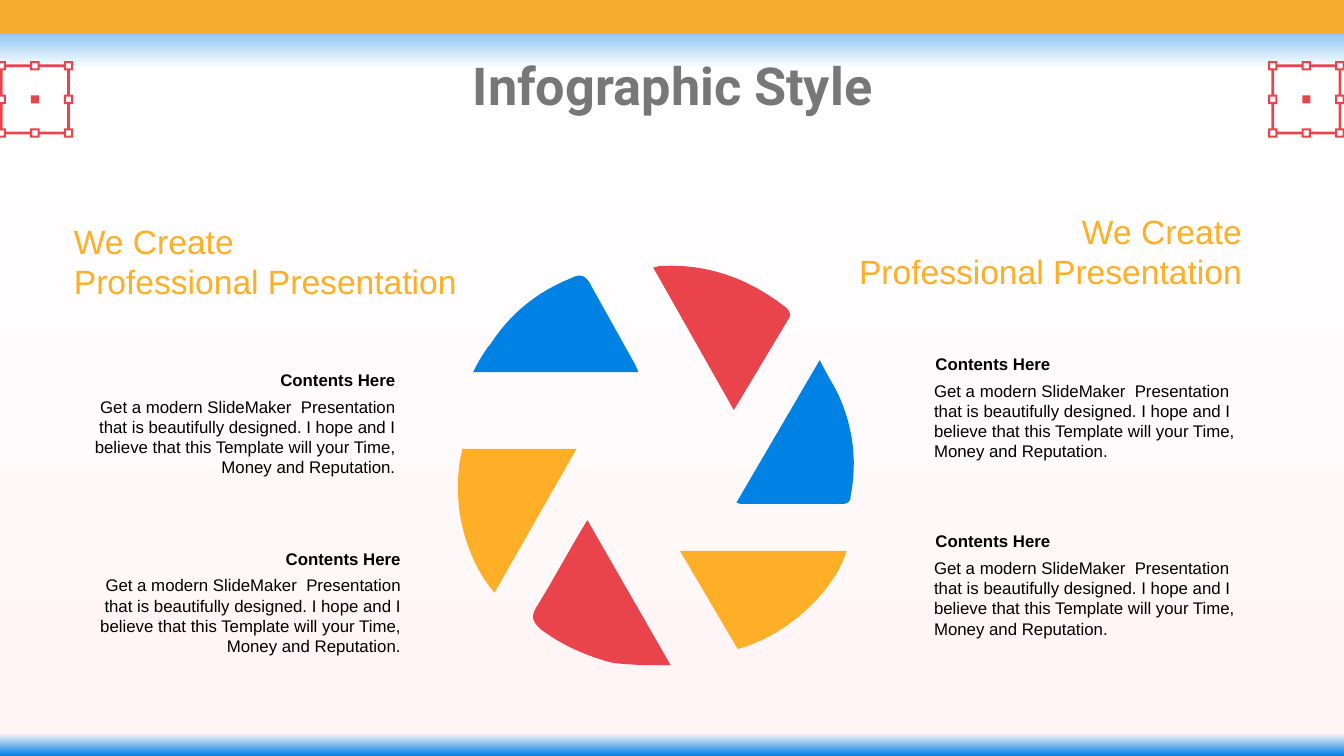
from dataclasses import dataclass
from itertools import product

from lxml import etree
from pptx import Presentation
from pptx.dml.color import RGBColor
from pptx.enum.shapes import MSO_SHAPE
from pptx.enum.text import PP_ALIGN
from pptx.oxml import parse_xml
from pptx.oxml.ns import nsdecls, qn
from pptx.shapes.autoshape import Shape
from pptx.slide import Slide
from pptx.util import Inches, Pt

BLUE = RGBColor(0x00, 0x82, 0xE5)
RED = RGBColor(0xE9, 0x44, 0x4C)
YELLOW = RGBColor(0xFF, 0xAE, 0x27)
BAR_ORANGE = RGBColor(0xF8, 0xAC, 0x2D)
PEACH = RGBColor(0xFF, 0xEC, 0xDC)
GRAY = RGBColor(0x77, 0x77, 0x77)
BLACK = RGBColor(0x00, 0x00, 0x00)

SLIDE_WIDTH = 10
SLIDE_HEIGHT = SLIDE_WIDTH * 9 / 16
CURVE_STEPS = 12
BACKDROP_STOPS = ((0, "2291E7"), (9, "FFFFFF"), (97, "FFF5F6"), (100, "0082E5"))
BODY = ("Get a modern SlideMaker  Presentation that is beautifully designed. "
        "I hope and I believe that this Template will your Time, Money and Reputation.")


@dataclass
class TextStyle:
    size: float
    color: RGBColor
    bold: bool = False
    font: str = "Arial"
    align: PP_ALIGN = PP_ALIGN.LEFT
    insets: tuple[float, float, float, float] = (0.06, 0.05, 0.09, 0.05)


@dataclass
class Block:
    left: float
    top: float
    width: float
    align: PP_ALIGN


@dataclass
class Blade:
    """A closed outline: 2 numbers make a line, 6 a cubic curve."""
    color: RGBColor
    start: tuple[float, float]
    segments: list[tuple[float, ...]]


HEADINGS = [
    Block(0.49, 1.64, 3.12, PP_ALIGN.LEFT),
    Block(6.15, 1.57, 3.12, PP_ALIGN.RIGHT),
]
CONTENTS = [
    Block(6.89, 2.58, 2.57, PP_ALIGN.LEFT),
    Block(6.89, 3.9, 2.57, PP_ALIGN.LEFT),
    Block(0.49, 4.03, 2.58, PP_ALIGN.RIGHT),
    Block(0.45, 2.7, 2.58, PP_ALIGN.RIGHT),
]
BLADES = [
    Blade(YELLOW, (5.06, 4.1), [(6.3, 4.1), (6.22, 4.37, 5.89, 4.72, 5.49, 4.83)]),
    Blade(YELLOW, (3.44, 3.34), [(4.29, 3.34), (3.68, 4.41),
                                 (3.51, 4.22, 3.33, 3.8, 3.44, 3.34)]),
    Blade(BLUE, (3.52, 2.77), [(3.56, 2.69, 3.6, 2.62, 3.65, 2.56),
                               (3.8, 2.33, 4, 2.17, 4.25, 2.07),
                               (4.31, 2.04, 4.35, 2.04, 4.39, 2.11),
                               (4.73, 2.72), (4.75, 2.77)]),
    Blade(BLUE, (5.48, 3.74), [(6.1, 2.68), (6.15, 2.78, 6.2, 2.86, 6.24, 2.94),
                               (6.35, 3.18, 6.38, 3.44, 6.33, 3.69),
                               (6.33, 3.73, 6.31, 3.75, 6.27, 3.75), (5.51, 3.75)]),
    Blade(RED, (5.46, 3.05), [(4.86, 1.99), (4.89, 1.99, 4.9, 1.98, 4.91, 1.98),
                              (5.26, 1.96, 5.57, 2.07, 5.85, 2.29),
                              (5.87, 2.31, 5.89, 2.34, 5.87, 2.37), (5.48, 3.02)]),
    Blade(RED, (4.37, 3.87), [(4.99, 4.95), (4.83, 4.95, 4.68, 4.95, 4.55, 4.93),
                              (4.36, 4.88, 4.18, 4.8, 4.02, 4.68),
                              (3.96, 4.62, 3.95, 4.59, 3.99, 4.52),
                              (4.12, 4.31, 4.23, 4.1, 4.37, 3.87)]),
]


def paint(shape: Shape, fill: RGBColor) -> None:
    shape.shadow.inherit = False
    shape.fill.solid()
    shape.fill.fore_color.rgb = fill
    shape.line.fill.background()


def add_rectangle(page: Slide, left: float, top: float, width: float, height: float,
                  fill: RGBColor) -> Shape:
    shape = page.shapes.add_shape(MSO_SHAPE.RECTANGLE, Inches(left), Inches(top),
                                  Inches(width), Inches(height))
    paint(shape, fill)
    return shape


def add_outline(page: Slide, contours: list[list[tuple[float, float]]], fill: RGBColor) -> None:
    builder = None
    for contour in contours:
        first, *others = [(Inches(x), Inches(y)) for x, y in contour]
        if builder is None:
            builder = page.shapes.build_freeform(*first)
        else:
            builder.move_to(*first)
        builder.add_line_segments(others, close=True)
    paint(builder.convert_to_shape(), fill)


def add_backdrop(page: Slide) -> None:
    page.background.fill.solid()
    page.background.fill.fore_color.rgb = PEACH
    backdrop = add_rectangle(page, 0, 0, SLIDE_WIDTH, SLIDE_HEIGHT, PEACH)
    gradient = parse_xml(f'<a:gradFill {nsdecls("a")} rotWithShape="1"><a:gsLst/>'
                         '<a:lin ang="5400000" scaled="0"/></a:gradFill>')
    for position, color in BACKDROP_STOPS:
        stop = etree.SubElement(gradient[0], qn("a:gs"), pos=str(position * 1000))
        etree.SubElement(stop, qn("a:srgbClr"), val=color)
    properties = backdrop.element.spPr
    properties.replace(properties.find(qn("a:solidFill")), gradient)


def rectangle_points(center_x: float, center_y: float, width: float,
                     height: float) -> list[tuple[float, float]]:
    left, top = center_x - width / 2, center_y - height / 2
    return [(left, top), (left + width, top), (left + width, top + height), (left, top + height)]


def add_selection_frame(page: Slide, center_x: float, center_y: float) -> None:
    reach, outer, inner, stroke = 0.25, 0.07, 0.04, 0.02
    contours = []
    # Hollow handles
    for column, row in product((-1, 0, 1), repeat=2):
        if column or row:
            for side in (outer, inner):
                contours.append(rectangle_points(center_x + column * reach,
                                                 center_y + row * reach, side, side))
    # Edges between the handles
    for side, half in product((-1, 1), repeat=2):
        across, along = side * reach, half * reach / 2
        contours.append(rectangle_points(center_x + along, center_y + across,
                                         reach - outer, stroke))
        contours.append(rectangle_points(center_x + across, center_y + along,
                                         stroke, reach - outer))
    add_outline(page, contours, RED)
    add_rectangle(page, center_x - 0.03, center_y - 0.03, 0.06, 0.06, RED)


def add_text(page: Slide, left: float, top: float, width: float, height: float,
             text: str, style: TextStyle) -> Shape:
    box = page.shapes.add_textbox(Inches(left), Inches(top), Inches(width), Inches(height))
    frame = box.text_frame
    frame.word_wrap = True
    (frame.margin_left, frame.margin_top,
     frame.margin_right, frame.margin_bottom) = map(Inches, style.insets)
    frame.text = text
    for para in frame.paragraphs:
        para.alignment = style.align
        for span in para.runs:
            span.font.name = style.font
            span.font.size = Pt(style.size)
            span.font.bold = style.bold
            span.font.color.rgb = style.color
    return box


def add_content(page: Slide, block: Block) -> None:
    title = TextStyle(9, BLACK, bold=True, align=block.align, insets=(0.07, 0.05, 0.09, 0.05))
    add_text(page, block.left, block.top, block.width, 0.25, "Contents Here", title)
    body = TextStyle(9, BLACK, align=block.align)
    add_text(page, block.left, block.top + 0.2, block.width, 0.71, BODY, body)


def blade_points(blade: Blade) -> list[tuple[float, float]]:
    points = [blade.start]
    for segment in blade.segments:
        if len(segment) == 2:
            points.append(segment)
            continue
        x0, y0 = points[-1]
        x1, y1, x2, y2, x3, y3 = segment
        for step in range(1, CURVE_STEPS + 1):
            t = step / CURVE_STEPS
            a, b, c, d = (1 - t) ** 3, 3 * t * (1 - t) ** 2, 3 * t * t * (1 - t), t ** 3
            points.append((a * x0 + b * x1 + c * x2 + d * x3,
                           a * y0 + b * y1 + c * y2 + d * y3))
    return points


def main() -> None:
    deck = Presentation()
    deck.slide_width, deck.slide_height = Inches(SLIDE_WIDTH), Inches(SLIDE_HEIGHT)
    page = deck.slides.add_slide(deck.slide_layouts[6])

    # Backdrop, corner frames and top bar
    add_backdrop(page)
    for center_x in (9.72, 0.26):
        add_selection_frame(page, center_x, 0.74)
    add_rectangle(page, -0.02, -0.03, 10.05, 0.28, BAR_ORANGE)

    # Title, with a hanging indent
    title_style = TextStyle(28, GRAY, True, "Roboto", PP_ALIGN.CENTER, (0.1,) * 4)
    title = add_text(page, 3.03, 0.3, 3.8, 0.76, "Infographic Style", title_style)
    indent = title.text_frame.paragraphs[0]._p.get_or_add_pPr()
    indent.set("marL", str(Inches(0.5)))
    indent.set("indent", str(Inches(-0.35)))

    # Text blocks
    for block in CONTENTS:
        add_content(page, block)
    for block in HEADINGS:
        style = TextStyle(18, YELLOW, align=block.align, insets=(0.06, 0, 0.03, 0))
        add_text(page, block.left, block.top, block.width, 0.61,
                 "We Create\nProfessional Presentation", style)

    # Aperture wheel
    for blade in BLADES:
        add_outline(page, [blade_points(blade)], blade.color)

    deck.save("out.pptx")


if __name__ == "__main__":
    main()
